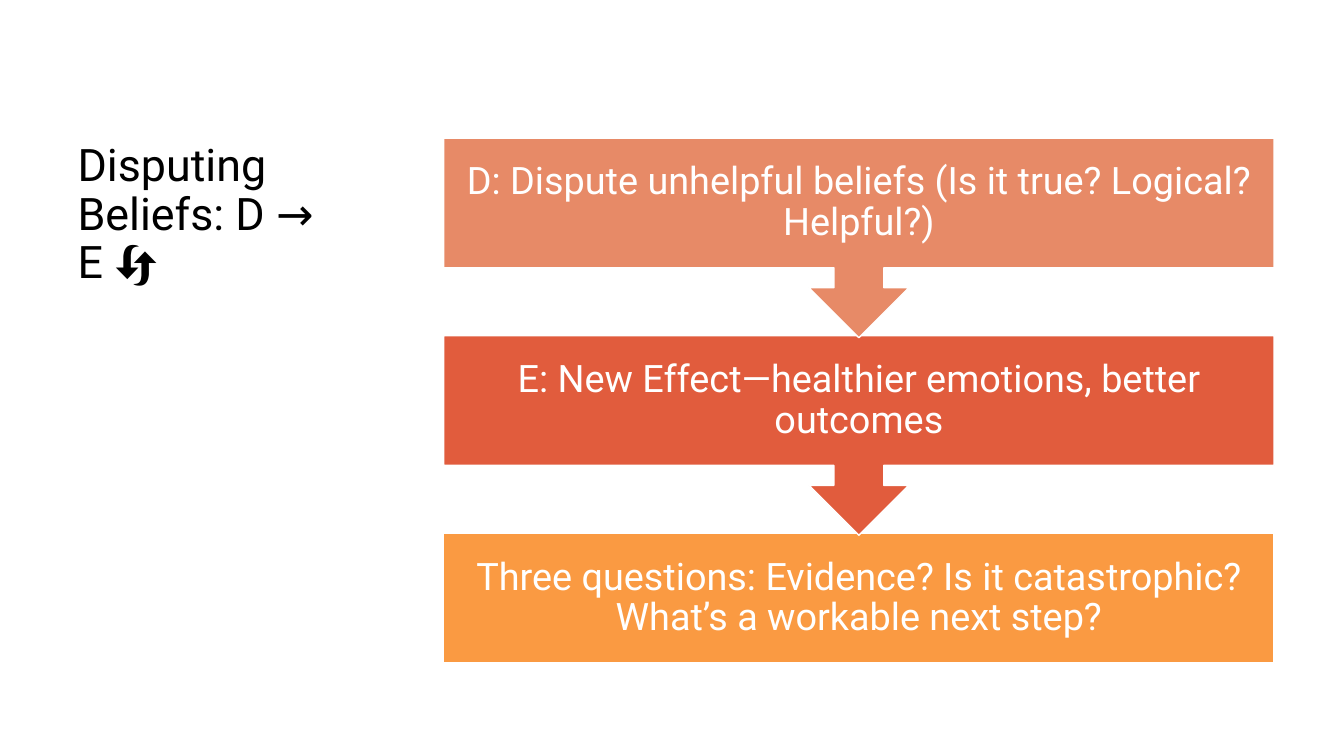
from pptx import Presentation
from pptx.dml.color import RGBColor
from pptx.enum.shapes import MSO_SHAPE as Shape
from pptx.enum.text import MSO_ANCHOR as Anchor, MSO_AUTO_SIZE as AutoSize, PP_ALIGN as Align
from pptx.util import Cm, Pt

FONT = "Roboto"
WHITE = RGBColor(0xFF, 0xFF, 0xFF)
BLACK = RGBColor(0x00, 0x00, 0x00)
SALMON = RGBColor(0xE7, 0x8A, 0x67)
RED = RGBColor(0xE1, 0x5C, 0x3D)
ORANGE = RGBColor(0xFA, 0x9A, 0x42)

TITLE = "Disputing Beliefs: D → E 🔄"
STEPS = [
    ("D: Dispute unhelpful beliefs (Is it true? Logical? Helpful?)", SALMON),
    ("E: New Effect—healthier emotions, better outcomes", RED),
    ("Three questions: Evidence? Is it catastrophic? What’s a workable next step?", ORANGE),
]

TOP = Cm(3.48)
STEP_LEFT, STEP_WIDTH = Cm(11.18), Cm(20.93)
STEP_PITCH = Cm(4.98)
BOX_HEIGHT, CALLOUT_HEIGHT = Cm(3.27), Cm(5.03)
STEP_INSET = Cm(0.53)


def set_text(text_frame, text, size, color, align, anchor):
    text_frame.text = text
    text_frame.word_wrap = True
    text_frame.auto_size = AutoSize.NONE
    text_frame.vertical_anchor = anchor
    paragraph = text_frame.paragraphs[0]
    paragraph.alignment = align
    paragraph.line_spacing = 0.9
    for run in paragraph.runs:
        run.font.name = FONT
        run.font.size = Pt(size)
        run.font.color.rgb = color


def format_title(title):
    title.left, title.top = Cm(1.7), TOP
    title.width, title.height = Cm(8.08), Cm(13.26)
    set_text(title.text_frame, TITLE, 32, BLACK, Align.LEFT, Anchor.TOP)


def add_step(slide, index, text, color):
    """Add one step; every step but the last points down to the next."""
    is_last = index == len(STEPS) - 1
    kind = Shape.RECTANGLE if is_last else Shape.DOWN_ARROW_CALLOUT
    height = BOX_HEIGHT if is_last else CALLOUT_HEIGHT
    shape = slide.shapes.add_shape(
        kind, STEP_LEFT, TOP + index * STEP_PITCH, STEP_WIDTH, height)
    shape.shadow.inherit = False
    shape.fill.solid()
    shape.fill.fore_color.rgb = color
    shape.line.color.rgb = WHITE
    shape.line.width = Pt(1)
    text_frame = shape.text_frame
    text_frame.margin_left = text_frame.margin_right = STEP_INSET
    text_frame.margin_top = text_frame.margin_bottom = STEP_INSET
    set_text(text_frame, text, 27, WHITE, Align.CENTER, Anchor.MIDDLE)


def main():
    presentation = Presentation()
    presentation.slide_width = Cm(33.87)
    presentation.slide_height = Cm(19.05)
    slide = presentation.slides.add_slide(presentation.slide_layouts[5])
    format_title(slide.shapes.title)
    # Bottom step first, so that each arrow tip lies over the step below it.
    for index, (text, color) in reversed(list(enumerate(STEPS))):
        add_step(slide, index, text, color)
    presentation.save("out.pptx")


if __name__ == "__main__":
    main()
